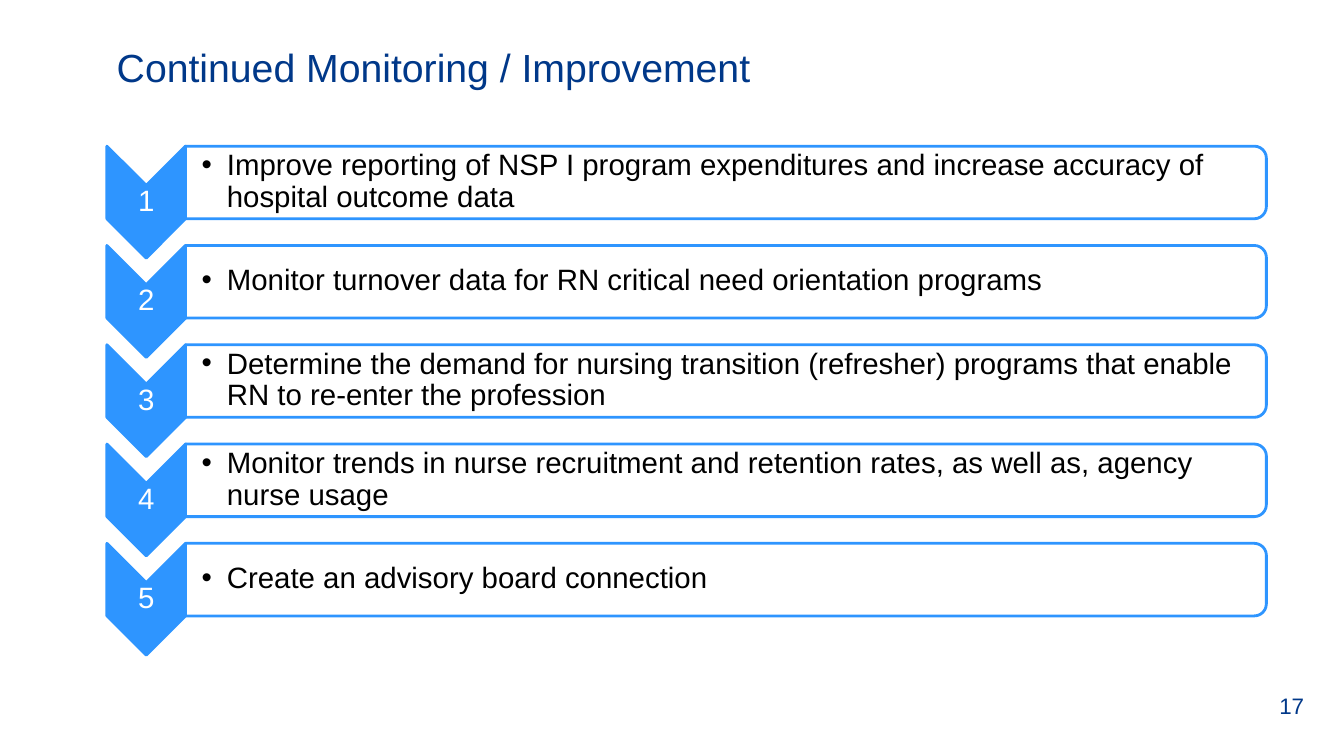
from dataclasses import dataclass

from lxml.etree import SubElement
from pptx import Presentation
from pptx.dml.color import RGBColor
from pptx.enum.shapes import MSO_SHAPE
from pptx.enum.text import MSO_ANCHOR, PP_ALIGN
from pptx.oxml.ns import qn
from pptx.util import Emu, Pt


@dataclass(frozen=True)
class Theme:
    """Colours, font and type sizes of the slide."""
    navy: str = "003889"
    blue: str = "2E95FF"
    white: str = "FFFFFF"
    black: str = "000000"
    font: str = "Arial"
    title_size: int = 28
    step_size: int = 21
    number_size: int = 16
    outline: int = 2


THEME = Theme()
EMU_PER_PX = 9144
STEPS = [
    "Improve reporting of NSP I program expenditures and increase accuracy of hospital outcome data",
    "Monitor turnover data for RN critical need orientation programs",
    "Determine the demand for nursing transition (refresher) programs that enable RN to re-enter the profession",
    "Monitor trends in nurse recruitment and retention rates, as well as, agency nurse usage",
    "Create an advisory board connection",
]


def px(length):
    """Turn a length in px into EMU."""
    return Emu(round(length * EMU_PER_PX))


def add_bullet(paragraph, indent):
    """Give the paragraph a round bullet with a hanging indent."""
    properties = paragraph._p.get_or_add_pPr()
    properties.set("marL", str(px(indent)))
    properties.set("indent", str(-px(indent)))
    SubElement(properties, qn("a:buFont"), typeface=THEME.font)
    SubElement(properties, qn("a:buChar"), char="•")


def add_text(slide, text, box, *, size, color, anchor=MSO_ANCHOR.MIDDLE,
             align=PP_ALIGN.LEFT, insets=(10, 5, 10, 5), spacing=None, bullet_indent=0):
    """Add a wrapped text box with one formatted paragraph."""
    frame = slide.shapes.add_textbox(*map(px, box)).text_frame
    frame.word_wrap = True
    frame.vertical_anchor = anchor
    (frame.margin_left, frame.margin_top,
     frame.margin_right, frame.margin_bottom) = map(px, insets)
    paragraph = frame.paragraphs[0]
    paragraph.alignment = align
    if spacing:
        paragraph.line_spacing = spacing
    if bullet_indent:
        add_bullet(paragraph, bullet_indent)
    run = paragraph.add_run()
    run.text = text
    run.font.name = THEME.font
    run.font.size = Pt(size)
    run.font.color.rgb = RGBColor.from_string(color)


def add_turned_shape(slide, preset, box, fill):
    """Add a preset shape turned a quarter so that it covers the box."""
    left, top, width, height = box
    shift = (width - height) / 2
    shape = slide.shapes.add_shape(
        preset, px(left + shift), px(top - shift), px(height), px(width))
    shape.rotation = 90
    shape.shadow.inherit = False
    shape.fill.solid()
    shape.fill.fore_color.rgb = RGBColor.from_string(fill)
    shape.line.color.rgb = RGBColor.from_string(THEME.blue)
    shape.line.width = Pt(THEME.outline)


def add_step(slide, number, text, box):
    """Draw one numbered chevron with its framed step."""
    left, top, width, height = box
    chevron_width, frame_height = 78, 72
    frame_left = left + chevron_width
    frame_width = width - chevron_width
    add_turned_shape(slide, MSO_SHAPE.CHEVRON,
                     (left, top, chevron_width, height), THEME.blue)
    add_text(slide, str(number), (left, top + 39, chevron_width, 33),
             size=THEME.step_size, color=THEME.white, align=PP_ALIGN.CENTER,
             insets=(1, 1, 1, 1), spacing=0.9)
    add_turned_shape(slide, MSO_SHAPE.ROUND_2_SAME_RECTANGLE,
                     (frame_left, top, frame_width, frame_height), THEME.white)
    add_text(slide, text, (frame_left, top + 3, frame_width - 3, frame_height - 7),
             size=THEME.step_size, color=THEME.black,
             insets=(16, 1, 1, 1), spacing=0.9, bullet_indent=25)


def add_steps(slide, box):
    """Spread the steps evenly from the top to the bottom of the box."""
    left, top, width, height = box
    step_height = 111
    pitch = (height - step_height) / (len(STEPS) - 1)
    for index, text in enumerate(STEPS):
        add_step(slide, index + 1, text,
                 (left, top + index * pitch, width, step_height))


def main():
    """Build the slide and save it."""
    deck = Presentation()
    deck.slide_width, deck.slide_height = px(1333), px(750)
    slide = deck.slides.add_slide(deck.slide_layouts[6])
    add_text(slide, "17", (1259, 680, 63, 40),
             size=THEME.number_size, color=THEME.navy)
    add_text(slide, "Continued Monitoring / Improvement", (106, 38, 1150, 66),
             size=THEME.title_size, color=THEME.navy, anchor=MSO_ANCHOR.TOP)
    add_steps(slide, (106, 145, 1150, 505))
    deck.save("out.pptx")


if __name__ == "__main__":
    main()
